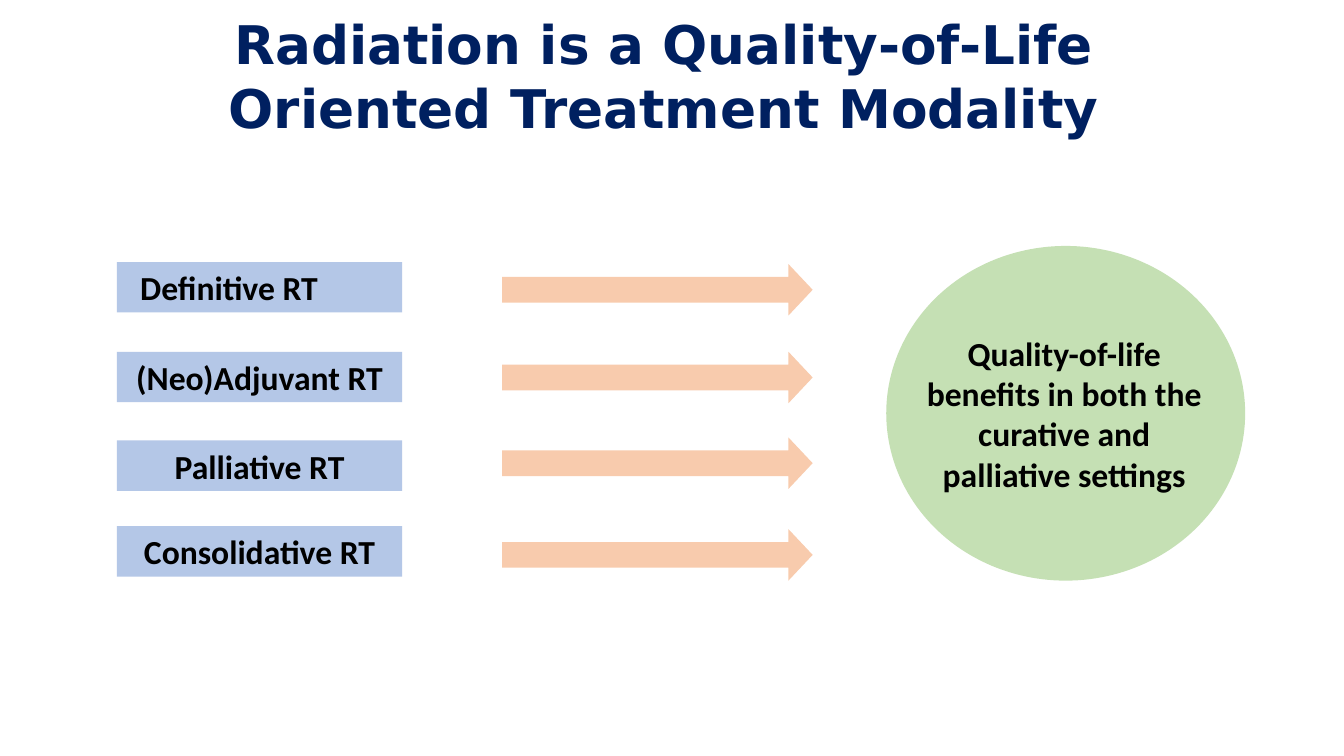
from pptx import Presentation
from pptx.dml.color import RGBColor
from pptx.enum.shapes import MSO_SHAPE as Shape
from pptx.enum.text import MSO_ANCHOR as Anchor, MSO_AUTO_SIZE as AutoSize, PP_ALIGN as Align
from pptx.util import Inches, Pt

COLORS = {
    "title": "002060",
    "text": "000000",
    "therapy": "B4C7E7",
    "arrow": "F8CBAD",
    "benefit": "C5E0B4",
}


def write_text(box, text, size=24, font="Calibri", color="text", align=Align.CENTER,
               anchor=Anchor.TOP, left=0.1, right=0.1):
    frame = box.text_frame
    frame.word_wrap = True
    frame.auto_size = AutoSize.NONE
    frame.vertical_anchor = anchor
    frame.margin_left, frame.margin_right = Inches(left), Inches(right)
    frame.margin_top = frame.margin_bottom = Inches(0.05)
    para = frame.paragraphs[0]
    para.text = text
    para.alignment = align
    for span in para.runs:
        span.font.name = font
        span.font.size = Pt(size)
        span.font.bold = True
        span.font.color.rgb = RGBColor.from_string(COLORS[color])


def add_block(kind, left, top, width, height, color):
    block = slide.shapes.add_shape(kind, Inches(left), Inches(top), Inches(width), Inches(height))
    block.shadow.inherit = False
    block.fill.solid()
    block.fill.fore_color.rgb = RGBColor.from_string(COLORS[color])
    block.line.fill.background()
    return block


deck = Presentation()
deck.slide_width, deck.slide_height = Inches(13.33), Inches(7.5)
slide = deck.slides.add_slide(deck.slide_layouts[5])

title = slide.shapes.title
title.left, title.top = Inches(0.02), Inches(0)
title.width, title.height = Inches(13.33), Inches(1.49)
write_text(title, "Radiation is a Quality-of-Life\vOriented Treatment Modality", size=38,
           font="DejaVu Sans", color="title", anchor=Anchor.MIDDLE, right=0.3)

therapies = [
    ("Definitive RT", 2.6, 2.62, {"align": Align.LEFT, "left": 0.23}),
    ("(Neo)Adjuvant RT", 3.49, 3.49, {}),
    ("Palliative RT", 4.37, 4.34, {}),
    ("Consolidative RT", 5.22, 5.25, {}),
]
for name, box_top, arrow_top, layout in therapies:
    box = add_block(Shape.RECTANGLE, 1.16, box_top, 2.83, 0.5, "therapy")
    write_text(box, name, **layout)
    arrow = add_block(Shape.RIGHT_ARROW, 4.98, arrow_top, 3.08, 0.51, "arrow")
    arrow.adjustments[1] = 0.47

add_block(Shape.OVAL, 8.79, 2.44, 3.56, 3.32, "benefit")
benefit = slide.shapes.add_textbox(Inches(9.08), Inches(3.25), Inches(2.95), Inches(1.72))
write_text(benefit, "Quality-of-life benefits in both the curative and palliative settings")

deck.save("out.pptx")
